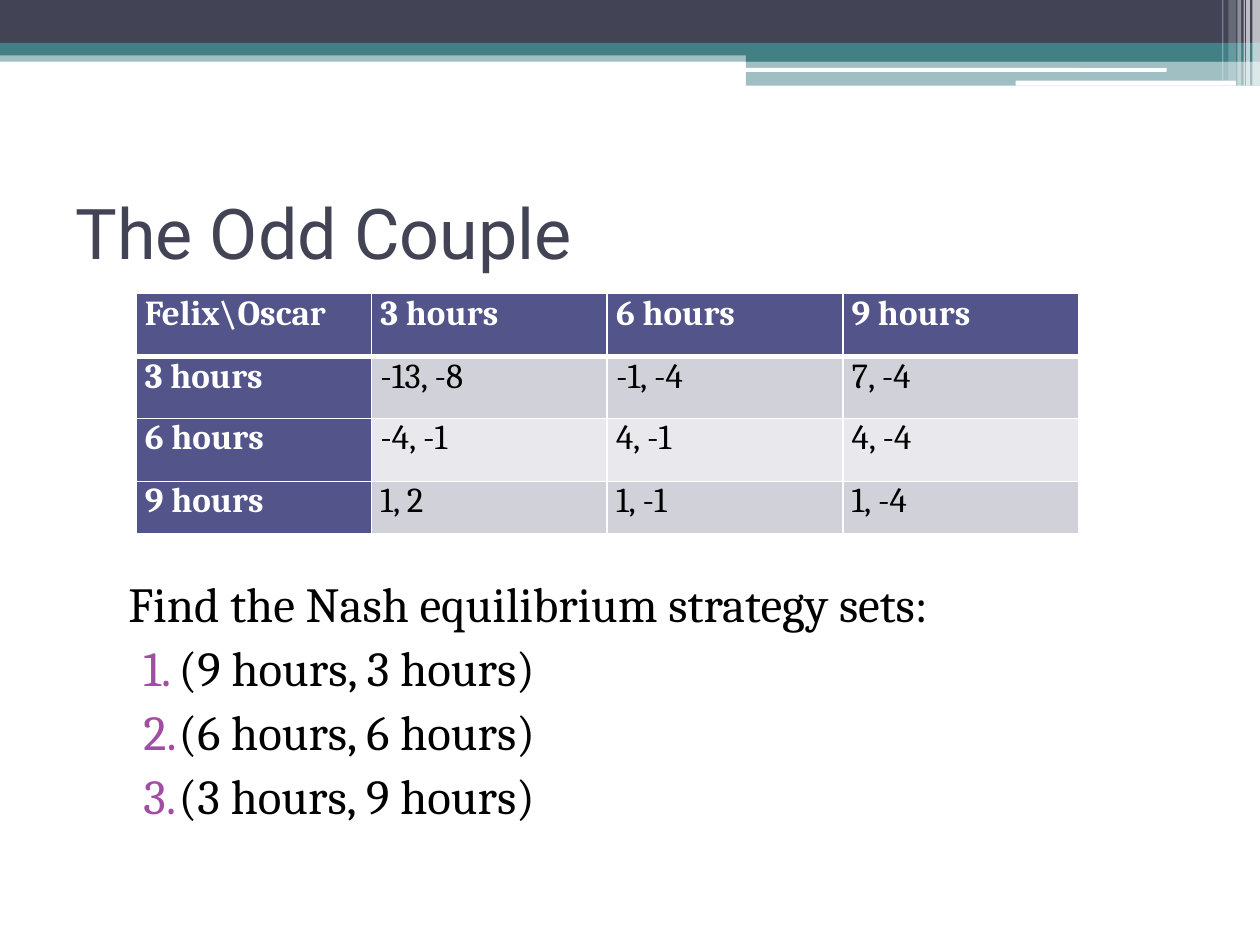
"""Build the slide on the Odd Couple cleaning game and its Nash equilibria."""
from dataclasses import dataclass

import pptx
import pptx.dml.color
import pptx.enum.shapes
import pptx.enum.text
import pptx.oxml.ns
import pptx.oxml.xmlchemy
import pptx.util
from lxml import etree
from pptx.util import Inches

SLATE, TEAL, PURPLE, WHITE, BLACK = "424456", "438086", "53548A", "FFFFFF", "000000"
NUMBER_COLOUR = "A04DA3"
ROW_FILLS = ["D1D1DA", "E9E9ED"]
BODY_FONT, TITLE_FONT = "Cambria", "Roboto"


@dataclass
class Band:
    left: float
    top: float
    width: float
    height: float
    colour: str
    opacity: int = 100
    rounded: bool = False


BANDS = [
    Band(0, 0.4, 10, 0.09, TEAL, 50),
    Band(0, 0, 10, 0.34, SLATE),
    Band(0, 0.34, 10, 0.1, TEAL),
    Band(5.92, 0.39, 4.08, 0.1, TEAL),
    Band(5.92, 0.48, 4.08, 0.2, TEAL, 50),
    Band(5.91, 0.54, 3.35, 0.03, WHITE, rounded=True),
    Band(8.06, 0.64, 1.75, 0.04, WHITE, rounded=True),
    Band(9.94, 0, 0.06, 0.68, WHITE, 65),
    Band(9.89, 0, 0.03, 0.68, WHITE, 65),
    Band(9.87, 0, 0.01, 0.68, WHITE, 60),
    Band(9.82, 0, 0.03, 0.68, WHITE, 40),
    Band(9.75, 0, 0.06, 0.64, WHITE, 20),
    Band(9.7, 0, 0.01, 0.64, WHITE, 30),
]
PAYOFFS = [
    ["Felix\\Oscar", "3 hours", "6 hours", "9 hours"],
    ["3 hours", "-13, -8", "-1, -4", "7, -4"],
    ["6 hours", "-4, -1", "4, -1", "4, -4"],
    ["9 hours", "1, 2", "1, -1", "1, -4"],
]
ROW_HEIGHTS = [0.5, 0.49, 0.5, 0.42]
COLUMN_WIDTH = 1.87
EQUILIBRIA = ["(9 hours, 3 hours)", "(6 hours, 6 hours)", "(3 hours, 9 hours)"]


def rgb(colour: str) -> pptx.dml.color.RGBColor:
    return pptx.dml.color.RGBColor.from_string(colour)


def add_child(parent, tag: str, **attributes: str):
    return etree.SubElement(parent, pptx.oxml.ns.qn(tag), attributes)


def add_run(paragraph, text: str, size: float, font: str, colour: str, bold: bool = False) -> None:
    run = paragraph.add_run()
    run.text = text
    run.font.size = pptx.util.Pt(size)
    run.font.name = font
    run.font.bold = bold
    run.font.color.rgb = rgb(colour)


def add_band(slide, band: Band) -> None:
    kinds = pptx.enum.shapes.MSO_SHAPE
    kind = kinds.ROUNDED_RECTANGLE if band.rounded else kinds.RECTANGLE
    bar = slide.shapes.add_shape(
        kind, Inches(band.left), Inches(band.top), Inches(band.width), Inches(band.height)
    )
    bar.shadow.inherit = False
    bar.line.fill.background()
    bar.fill.solid()
    bar.fill.fore_color.rgb = rgb(band.colour)
    if band.opacity < 100:
        colour = bar._element.spPr.find(".//" + pptx.oxml.ns.qn("a:srgbClr"))
        add_child(colour, "a:alpha", val=str(band.opacity * 1000))


def add_text_frame(slide, left: float, top: float, width: float, height: float):
    box = slide.shapes.add_textbox(Inches(left), Inches(top), Inches(width), Inches(height))
    box.text_frame.word_wrap = True
    return box.text_frame


def add_title(slide) -> None:
    title = add_text_frame(slide, 0.5, 1.25, 9, 1.17)
    title.vertical_anchor = pptx.enum.text.MSO_ANCHOR.MIDDLE
    add_run(title.paragraphs[0], "The Odd Couple", 40, TITLE_FONT, SLATE)


def number_paragraph(paragraph) -> None:
    properties = paragraph._p.get_or_add_pPr()
    properties.set("marL", str(Inches(0.4)))
    properties.set("indent", str(Inches(-0.28)))
    add_child(add_child(properties, "a:buClr"), "a:srgbClr", val=NUMBER_COLOUR)
    add_child(properties, "a:buFont", typeface=BODY_FONT)
    add_child(properties, "a:buAutoNum", type="arabicPeriod")


def add_question(slide) -> None:
    question = add_text_frame(slide, 0.92, 4.5, 9.08, 2.53)
    prompt = question.paragraphs[0]
    answers = [question.add_paragraph() for _ in EQUILIBRIA]
    texts = ["Find the Nash equilibrium strategy sets:", *EQUILIBRIA]
    for paragraph, text in zip([prompt, *answers], texts):
        paragraph.space_before = pptx.util.Pt(3)
        add_run(paragraph, text, 28, BODY_FONT, BLACK)
    for answer in answers:
        number_paragraph(answer)


def add_borders(cell, widths: dict[str, float]) -> None:
    properties = cell._tc.get_or_add_tcPr()
    for side, width in widths.items():
        line = add_child(properties, f"a:ln{side}", w=str(pptx.util.Pt(width)))
        add_child(add_child(line, "a:solidFill"), "a:srgbClr", val=WHITE)


def fill_cell(cell, text: str, row: int, column: int) -> None:
    heading = row == 0 or column == 0
    cell.margin_left = cell.margin_right = Inches(0.07)
    cell.margin_top = cell.margin_bottom = 0
    add_borders(cell, {"L": 1, "R": 1, "T": 3 if row == 1 else 1, "B": 3 if row == 0 else 1})
    cell.fill.solid()
    cell.fill.fore_color.rgb = rgb(PURPLE if heading else ROW_FILLS[(row - 1) % 2])
    colour = WHITE if heading else BLACK
    add_run(cell.text_frame.paragraphs[0], text, 20, BODY_FONT, colour, heading)


def add_payoffs(slide) -> None:
    columns = len(PAYOFFS[0])
    payoffs = slide.shapes.add_table(
        len(PAYOFFS), columns, Inches(1.08), Inches(2.33),
        Inches(COLUMN_WIDTH * columns), Inches(sum(ROW_HEIGHTS)),
    ).table
    payoffs.first_col = True
    for column in payoffs.columns:
        column.width = Inches(COLUMN_WIDTH)
    for row, (height, texts) in enumerate(zip(ROW_HEIGHTS, PAYOFFS)):
        payoffs.rows[row].height = Inches(height)
        for column, text in enumerate(texts):
            fill_cell(payoffs.cell(row, column), text, row, column)


def main() -> None:
    deck = pptx.Presentation()
    deck.slide_width, deck.slide_height = Inches(10), Inches(7.5)
    slide = deck.slides.add_slide(deck.slide_layouts[6])
    for band in BANDS:
        add_band(slide, band)
    add_title(slide)
    add_question(slide)
    add_payoffs(slide)
    deck.save("out.pptx")


if __name__ == "__main__":
    main()
